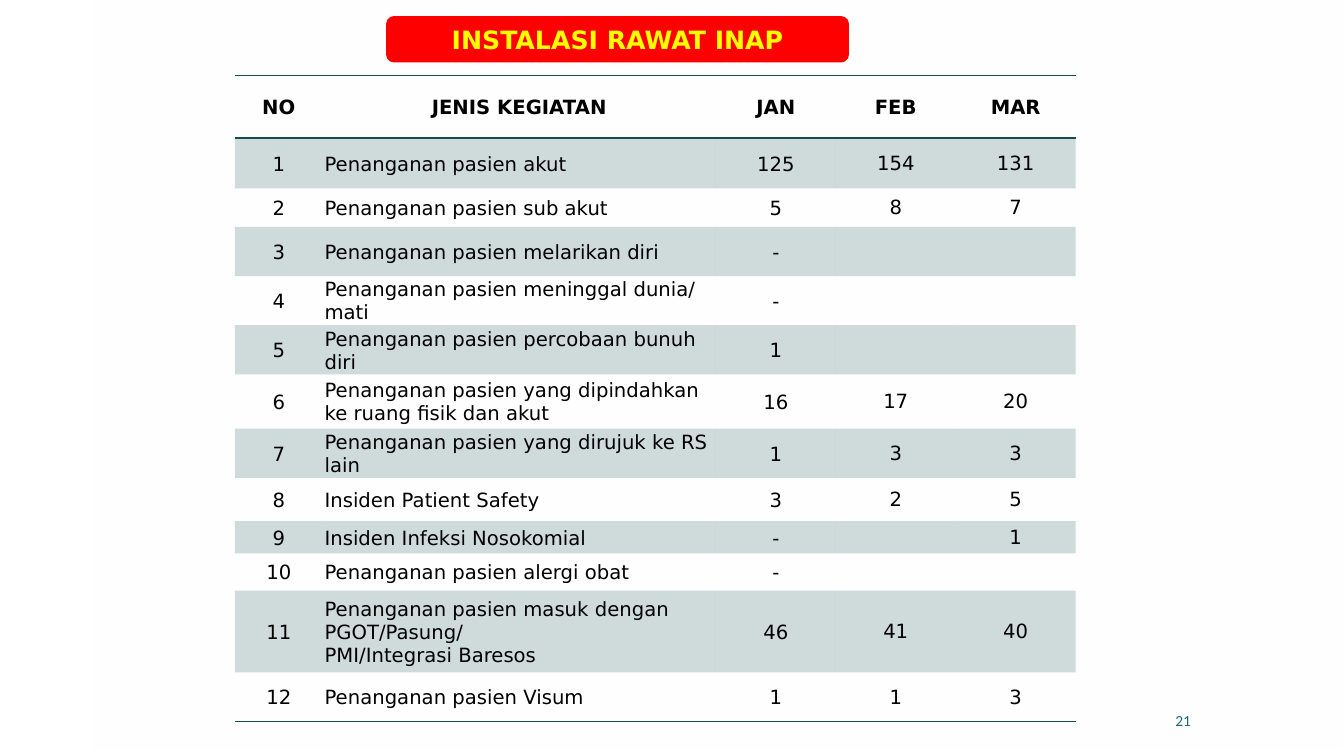
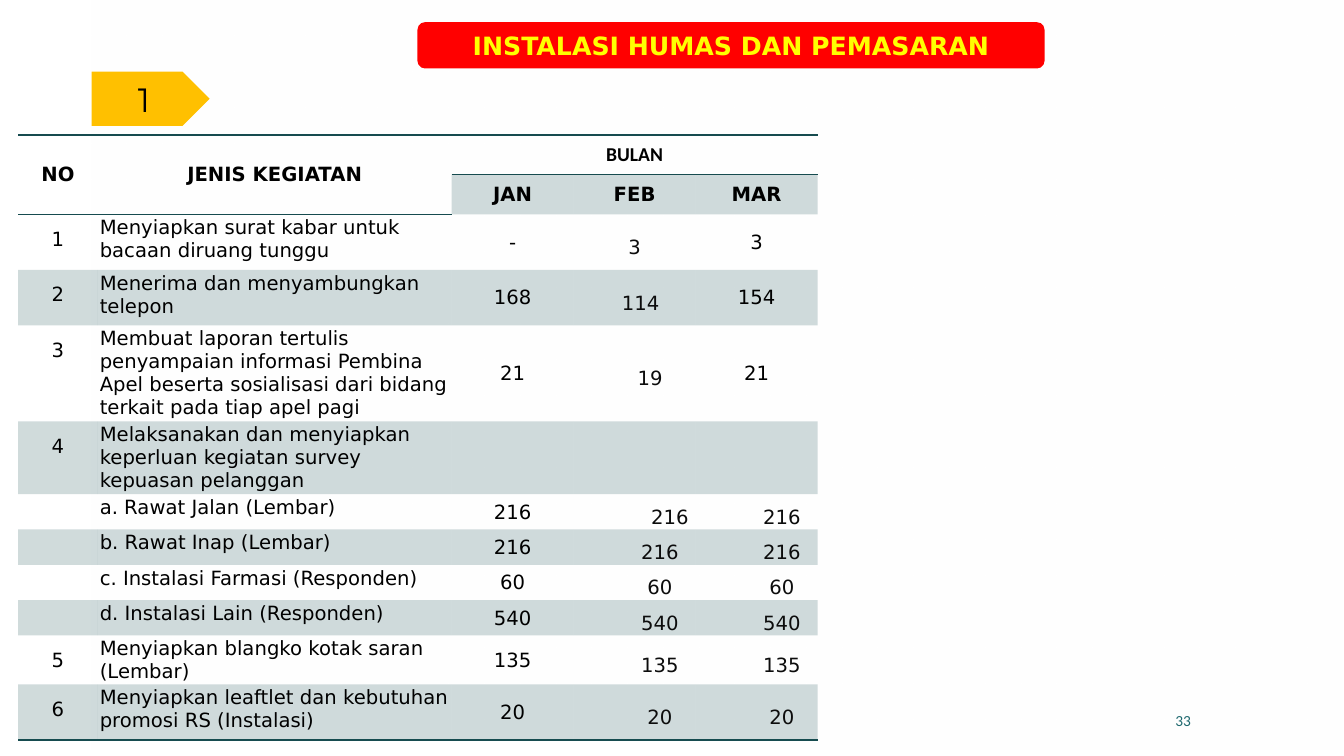
import dataclasses

import lxml.etree
import pptx
import pptx.dml.color
import pptx.enum.shapes
import pptx.enum.text
import pptx.oxml.ns
import pptx.util

PX = 9144  # EMU per px, 100 px to the inch
SLIDE_WIDTH, SLIDE_HEIGHT = 1333, 750

RGBColor = pptx.dml.color.RGBColor
WHITE = RGBColor(0xFF, 0xFF, 0xFF)
BLACK = RGBColor(0x00, 0x00, 0x00)
NEAR_BLACK = RGBColor(0x0C, 0x0C, 0x0C)
RED = RGBColor(0xFF, 0x00, 0x00)
YELLOW = RGBColor(0xFF, 0xFF, 0x00)
AMBER = RGBColor(0xFF, 0xC0, 0x00)
TEAL = RGBColor(0x1F, 0x69, 0x6F)
DARK_TEAL = RGBColor(0x16, 0x4B, 0x4F)

TABLE_FONT, NUMBER_FONT, STEP_FONT = "DejaVu Sans", "Calibri", "Montserrat"
PLAIN_TABLE_STYLE = "{2D5ABB26-0587-4C30-8999-92F81FD0307C}"

SHAPE = pptx.enum.shapes.MSO_SHAPE
ALIGN = pptx.enum.text.PP_ALIGN
ANCHOR = pptx.enum.text.MSO_ANCHOR
qn = pptx.oxml.ns.qn


@dataclasses.dataclass(frozen=True)
class CellStyle:
    align: int = ALIGN.CENTER
    anchor: int = ANCHOR.MIDDLE
    margins: tuple = (2, 2, 2, 0)
    indent: tuple = (0, 0)
    spacing: float = 1.0
    color: RGBColor = BLACK
    font: str = TABLE_FONT
    bold: bool = False


CENTERED = CellStyle()
LEFT = CellStyle(align=ALIGN.LEFT)
TIGHT = CellStyle(margins=(1, 1, 1, 0))
HEADER = CellStyle(bold=True)
PADDED_HEADER = CellStyle(bold=True, margins=(20, 8, 20, 8))
TOP_NUMBER = CellStyle(anchor=ANCHOR.TOP, spacing=1.5)
TOP_LEFT = CellStyle(align=ALIGN.LEFT, anchor=ANCHOR.TOP)
SPACED = CellStyle(margins=(7, 0, 7, 0), spacing=1.5, color=NEAR_BLACK)
INDENTED = dataclasses.replace(SPACED, indent=(50, 0))

INPATIENT_ROWS = [
    ["NO", "JENIS KEGIATAN", "JAN", "FEB", "MAR"],
    ["1", "Penanganan pasien akut", "125", "154", "131"],
    ["2", "Penanganan pasien sub akut", "5", "8", "7"],
    ["3", "Penanganan pasien melarikan diri", "-", "", ""],
    ["4", "Penanganan pasien meninggal dunia/ mati", "-", "", ""],
    ["5", "Penanganan pasien percobaan bunuh diri", "1", "", ""],
    ["6", "Penanganan pasien yang dipindahkan ke ruang fisik dan akut", "16", "17", "20"],
    ["7", "Penanganan pasien yang dirujuk ke RS lain", "1", "3", "3"],
    ["8", "Insiden Patient Safety", "3", "2", "5"],
    ["9", "Insiden Infeksi Nosokomial", "-", "", "1"],
    ["10", "Penanganan pasien alergi obat", "-", "", ""],
    ["11", "Penanganan pasien masuk dengan PGOT/Pasung/\vPMI/Integrasi Baresos", "46", "41", "40"],
    ["12", "Penanganan pasien Visum", "1", "1", "3"],
]
INPATIENT_HEIGHTS = [62, 50, 38, 49, 47, 48, 54, 47, 43, 32, 37, 81, 49]

MARKETING_ROWS = [
    ["NO", "JENIS KEGIATAN", "BULAN", "", ""],
    ["", "", "JAN", "FEB", "MAR"],
    ["1", "Menyiapkan surat kabar untuk bacaan diruang tunggu", "-", "3", "3"],
    ["2", "Menerima dan menyambungkan telepon", "168", "114", "154"],
    ["3", "Membuat laporan tertulis penyampaian informasi Pembina Apel beserta "
          "sosialisasi dari bidang terkait pada tiap apel pagi", "21", "19", "21"],
    ["4", "Melaksanakan dan menyiapkan keperluan kegiatan survey kepuasan pelanggan", "", "", ""],
    ["", "a. Rawat Jalan (Lembar)", "216", "216", "216"],
    ["", "b. Rawat Inap (Lembar)", "216", "216", "216"],
    ["", "c. Instalasi Farmasi (Responden)", "60", "60", "60"],
    ["", "d. Instalasi Lain (Responden)", "540", "540", "540"],
    ["5", "Menyiapkan blangko kotak saran (Lembar)", "135", "135", "135"],
    ["6", "Menyiapkan leaftlet dan kebutuhan promosi RS (Instalasi)", "20", "20", "20"],
]
MARKETING_HEIGHTS = [39, 38, 55, 55, 93, 70, 34, 34, 34, 34, 47, 55]
MARKETING_EXCEPTIONS = {
    (0, 2): dataclasses.replace(PADDED_HEADER, font=NUMBER_FONT),
    (2, 3): SPACED,
    (3, 3): dataclasses.replace(SPACED, indent=(12, 0)),
    (4, 3): dataclasses.replace(SPACED, indent=(26, 5)),
    (6, 3): dataclasses.replace(SPACED, indent=(7, 0), align=ALIGN.RIGHT),
    **{(row, 4): TIGHT for row in (2, 3, 4)},
}


def to_emu(lengths):
    return [length * PX for length in lengths]


def set_font(paragraph, name, size, color, bold=False):
    font = paragraph.font
    font.name, font.size, font.bold = name, pptx.util.Pt(size), bold
    font.color.rgb = color


def set_opacity(element, *percentages):
    """Give each colour inside the element its opacity, in order."""
    for color, percentage in zip(element.iter(qn("a:srgbClr")), percentages):
        alpha = lxml.etree.SubElement(color, qn("a:alpha"))
        alpha.set("val", str(percentage * 1000))


def add_plain_shape(slide, kind, box):
    shape = slide.shapes.add_shape(kind, *to_emu(box))
    shape.shadow.inherit = False
    shape.line.fill.background()
    return shape


def add_label(slide, kind, box, text, fill, font, size, color, bold=False):
    shape = add_plain_shape(slide, kind, box)
    shape.fill.solid()
    shape.fill.fore_color.rgb = fill
    frame = shape.text_frame
    frame.text, frame.word_wrap = text, True
    frame.vertical_anchor = ANCHOR.MIDDLE
    frame.paragraphs[0].alignment = ALIGN.CENTER
    set_font(frame.paragraphs[0], font, size, color, bold)


def add_title(slide, box, text):
    add_label(slide, SHAPE.ROUNDED_RECTANGLE, box, text, RED, TABLE_FONT, 18, YELLOW, True)


def add_base_slide(presentation, number):
    slide = presentation.slides.add_slide(presentation.slide_layouts[6])
    # Translucent veil
    veil = add_plain_shape(slide, SHAPE.RECTANGLE, (91, 0, 1241, SLIDE_HEIGHT))
    veil.fill.gradient()
    veil.fill.gradient_angle = 270
    for stop, position in zip(veil.fill.gradient_stops, (0, 1)):
        stop.color.rgb, stop.position = WHITE, position
    set_opacity(veil.fill._xPr, 60, 0)
    # Page number
    frame = slide.shapes.add_textbox(*to_emu((880, 695, 311, 40))).text_frame
    frame.text, frame.word_wrap = number, True
    frame.vertical_anchor = ANCHOR.MIDDLE
    frame.paragraphs[0].alignment = ALIGN.RIGHT
    set_font(frame.paragraphs[0], NUMBER_FONT, 11, TEAL)
    return slide


def write_cell(cell, text, style):
    cell.text = text
    cell.vertical_anchor = style.anchor
    (cell.margin_left, cell.margin_top,
     cell.margin_right, cell.margin_bottom) = to_emu(style.margins)
    paragraph = cell.text_frame.paragraphs[0]
    paragraph.alignment = style.align
    paragraph.line_spacing = style.spacing
    properties = paragraph._p.get_or_add_pPr()
    for name, length in zip(("marL", "indent"), to_emu(style.indent)):
        properties.set(name, str(length))
    set_font(paragraph, style.font, 14, style.color, style.bold)


def fill_cell(cell, shaded):
    if shaded:
        cell.fill.solid()
        cell.fill.fore_color.rgb = DARK_TEAL
        set_opacity(cell._tc.tcPr, 20)
    else:
        cell.fill.background()


def add_border(cell, side):
    properties = cell._tc.get_or_add_tcPr()
    line = lxml.etree.Element(qn("a:ln" + side), w="12700")
    fill = lxml.etree.SubElement(line, qn("a:solidFill"))
    lxml.etree.SubElement(fill, qn("a:srgbClr"), val=str(DARK_TEAL))
    # Top goes before bottom, and both before the cell fill
    properties.insert(0 if side == "T" else len(properties.findall(qn("a:lnT"))), line)


def add_activity_table(slide, left, top, widths, heights, rows, header, columns,
                       header_rows=1, exceptions=None, merges=()):
    box = (left, top, sum(widths), sum(heights))
    table = slide.shapes.add_table(len(rows), len(widths), *to_emu(box)).table
    table._tbl.tblPr.find(qn("a:tableStyleId")).text = PLAIN_TABLE_STYLE
    table.first_row = table.horz_banding = False
    for column, width in zip(table.columns, widths):
        column.width = width * PX
    for row, height in zip(table.rows, heights):
        row.height = height * PX
    for first, last in merges:
        table.cell(*first).merge(table.cell(*last))

    for row, texts in enumerate(rows):
        for column, text in enumerate(texts):
            cell = table.cell(row, column)
            style = header if row < header_rows else columns[column]
            if not cell.is_spanned:
                write_cell(cell, text, (exceptions or {}).get((row, column), style))
            fill_cell(cell, row % 2 == 1 and not cell.is_spanned)
            if row == 0:
                add_border(cell, "T")
            if row in (0, len(rows) - 1) or (row < header_rows and cell.is_spanned):
                add_border(cell, "B")


def build_inpatient_slide(presentation):
    slide = add_base_slide(presentation, "21")
    add_title(slide, (383, 16, 459, 46), "INSTALASI RAWAT INAP")
    add_activity_table(slide, 233, 75, [87, 390, 119, 119, 119], INPATIENT_HEIGHTS,
                       INPATIENT_ROWS, HEADER, [CENTERED, LEFT, CENTERED, TIGHT, TIGHT])


def build_marketing_slide(presentation):
    slide = add_base_slide(presentation, "33")
    add_activity_table(slide, 18, 134, [79, 351, 121, 121, 121], MARKETING_HEIGHTS,
                       MARKETING_ROWS, PADDED_HEADER,
                       [TOP_NUMBER, TOP_LEFT, TIGHT, INDENTED, INDENTED],
                       header_rows=2, exceptions=MARKETING_EXCEPTIONS,
                       merges=[((0, 0), (1, 0)), ((0, 1), (1, 1)), ((0, 2), (0, 4))])
    add_title(slide, (414, 22, 622, 46), "INSTALASI HUMAS DAN PEMASARAN")
    add_label(slide, SHAPE.PENTAGON, (91, 71, 117, 54), "1", AMBER, STEP_FONT, 24, BLACK)


def main():
    presentation = pptx.Presentation()
    presentation.slide_width = SLIDE_WIDTH * PX
    presentation.slide_height = SLIDE_HEIGHT * PX
    build_inpatient_slide(presentation)
    build_marketing_slide(presentation)
    presentation.save("out.pptx")


if __name__ == "__main__":
    main()
